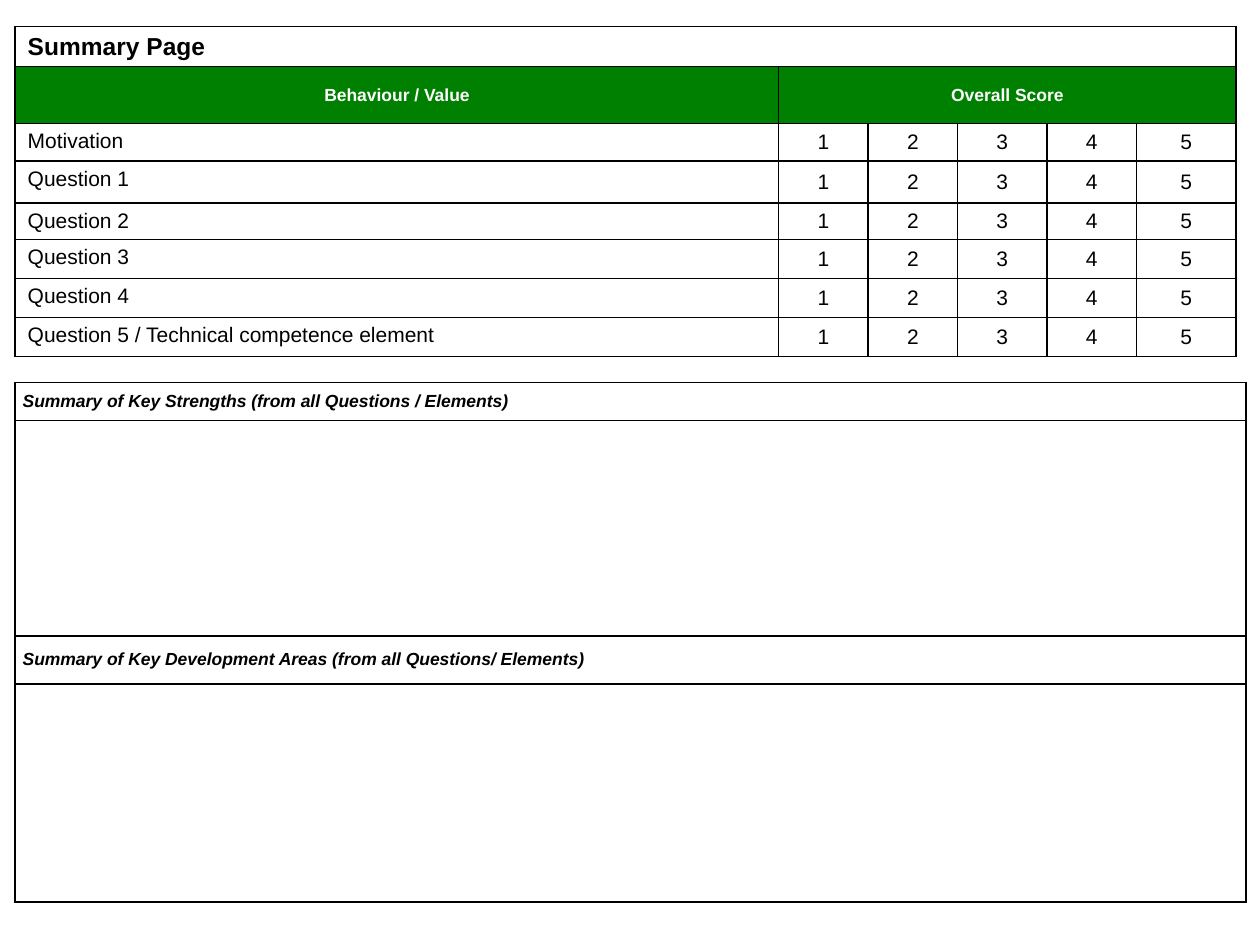
"""Build an interview summary page with a score grid and two comment areas."""
from lxml import etree
from pptx import Presentation, util as u
from pptx.dml.color import RGBColor
from pptx.enum import text
from pptx.oxml import parse_xml
from pptx.oxml.ns import nsdecls

BLACK = RGBColor(0x00, 0x00, 0x00)
WHITE = RGBColor(0xFF, 0xFF, 0xFF)
GREEN = RGBColor(0x00, 0x80, 0x00)

TITLE = {"size": u.Pt(14), "bold": True}
HEADER = {"size": u.Pt(10), "bold": True}
BODY = {"size": u.Pt(12), "bold": False}
COMMENT = {"size": u.Pt(10), "bold": True, "italic": True}
CENTER = text.PP_ALIGN.CENTER
MIDDLE = text.MSO_ANCHOR.MIDDLE


def add_grid(page, left, top, columns, rows):
    frame = page.shapes.add_table(
        len(rows), len(columns), left, top,
        u.Inches(sum(columns)), u.Inches(sum(rows)))
    grid = frame.table
    grid.first_row = grid.horz_banding = False
    for column, width in zip(grid.columns, columns):
        column.width = u.Inches(width)
    for row, height in zip(grid.rows, rows):
        row.height = u.Inches(height)
    for cell in grid.iter_cells():
        cell.fill.background()
        properties = cell._tc.get_or_add_tcPr()
        for position, side in enumerate(("lnL", "lnR", "lnT", "lnB")):
            border = parse_xml(f'<a:{side} {nsdecls("a")} w="{u.Pt(1)}"/>')
            fill = etree.SubElement(border, border.tag.replace(side, "solidFill"))
            color = etree.SubElement(fill, border.tag.replace(side, "srgbClr"))
            color.set("val", str(BLACK))
            properties.insert(position, border)
    return grid


def write(cell, words, style, color=BLACK, align=None, anchor=MIDDLE):
    cell.vertical_anchor = anchor
    para = cell.text_frame.paragraphs[0]
    para.alignment = align
    span = para.add_run()
    span.text = words
    span.font.name = "Arial"
    span.font.color.rgb = color
    for name, value in style.items():
        setattr(span.font, name, value)


deck = Presentation()
deck.slide_width, deck.slide_height = u.Inches(10), u.Inches(7.5)
page = deck.slides.add_slide(deck.slide_layouts[6])
left = int(deck.slide_width * 0.012)

scores = add_grid(
    page, left, int(deck.slide_height * 0.028),
    [6.06] + [0.71] * 4 + [0.79],
    [0.32, 0.45, 0.3, 0.33, 0.29] + [0.31] * 3)
scores.cell(0, 0).merge(scores.cell(0, 5))
scores.cell(1, 1).merge(scores.cell(1, 5))
write(scores.cell(0, 0), "Summary Page", TITLE)
for column, heading in enumerate(("Behaviour / Value", "Overall Score")):
    cell = scores.cell(1, column)
    cell.fill.solid()
    cell.fill.fore_color.rgb = GREEN
    write(cell, heading, HEADER, WHITE, CENTER)

elements = ["Motivation"] + [f"Question {number}" for number in range(1, 5)]
elements.append("Question 5 / Technical competence element")
for row, element in enumerate(elements, start=2):
    write(scores.cell(row, 0), element, BODY, anchor=text.MSO_ANCHOR.TOP)
    for score in range(1, 6):
        write(scores.cell(row, score), str(score), BODY, align=CENTER)

comments = add_grid(
    page, left, int(deck.slide_height * 0.405), [9.77], [0.3, 1.71, 0.38, 1.73])
margins = {"margin_left": 0.06, "margin_right": 0.06,
           "margin_top": 0, "margin_bottom": 0}
headings = {0: "Summary of Key Strengths (from all Questions / Elements)",
            2: "Summary of Key Development Areas (from all Questions/ Elements)"}
for row, heading in headings.items():
    cell = comments.cell(row, 0)
    for name, value in margins.items():
        setattr(cell, name, u.Inches(value))
    write(cell, heading, COMMENT)

deck.save("out.pptx")
